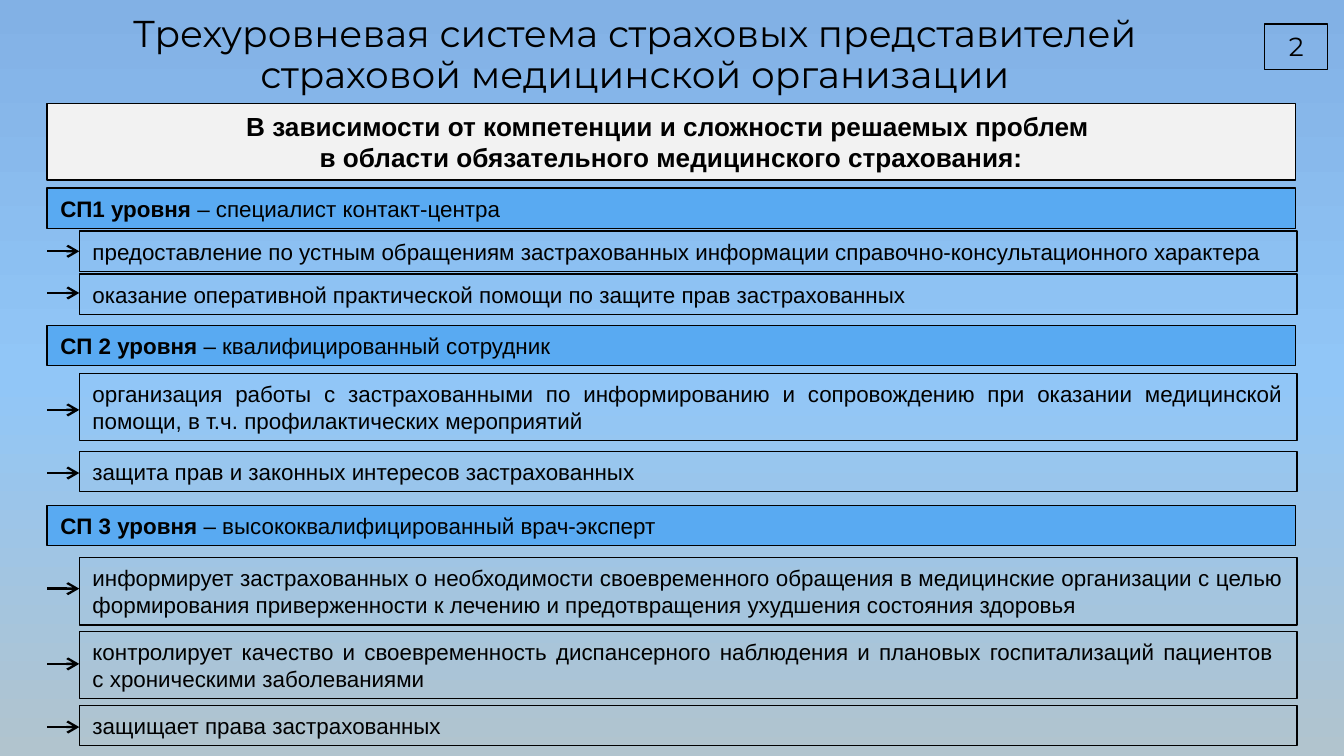
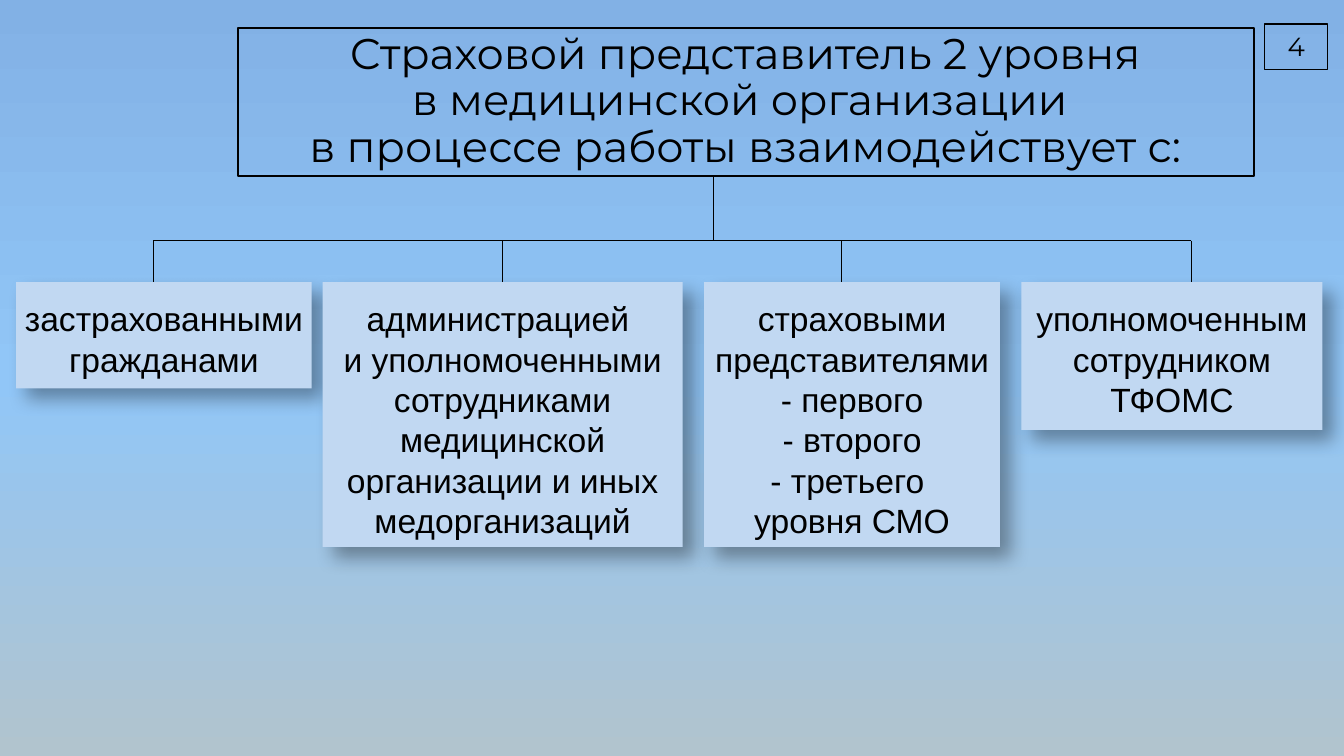
import pptx
import pptx.util
import pptx.dml.color
import pptx.enum.shapes
import pptx.enum.text
import pptx.oxml
import pptx.oxml.ns
from lxml import etree
from pptx.util import Inches

# Shared look
BLACK, PALE, LEVEL, CARD = "000000", "F2F2F2", "59AAF2", "C1D8F2"
BACKGROUND = [(0, "C1D8F2"), (0, "82B1E5"), (50, "91C6F7"), (100, "B1C4CE")]
HEAD_FONT, BODY_FONT = "Montserrat", "Arial"
INSETS = (0.1, 0.05, 0.1, 0.05)
CARD_INSETS = (0.04, 0.12, 0.04, 0)
ALIGN = pptx.enum.text.PP_ALIGN
ANCHOR = pptx.enum.text.MSO_ANCHOR

# Slide 1 content
LEVELS_TITLE = "Трехуровневая система страховых представителей страховой медицинской организации"
LEVELS_INTRO = [
    "В зависимости от компетенции и сложности решаемых проблем ",
    "в области обязательного медицинского страхования:",
]
# Each level: top, name, role, duties (top, height, arrow y, text)
LEVELS = [
    (1.4, "СП1 уровня", " – специалист контакт-центра", [
        (1.72, 0.3, 1.87, "предоставление по устным обращениям застрахованных информации "
                          "справочно-консультационного характера"),
        (2.04, 0.3, 2.18, "оказание оперативной практической помощи по защите прав "
                          "застрахованных"),
    ]),
    (2.42, "СП 2 уровня", " – квалифицированный сотрудник", [
        (2.78, 0.5, 3.05, "организация работы с застрахованными по информированию "
                          "и сопровождению при оказании медицинской помощи, "
                          "в т.ч. профилактических мероприятий"),
        (3.36, 0.3, 3.52, "защита прав и законных интересов застрахованных "),
    ]),
    (3.76, "СП 3 уровня", " – высококвалифицированный врач-эксперт", [
        (4.15, 0.5, 4.38, "информирует застрахованных о необходимости своевременного "
                          "обращения в медицинские организации с целью формирования "
                          "приверженности к лечению и предотвращения ухудшения "
                          "состояния здоровья"),
        (4.7, 0.5, 4.94, "контролирует качество и своевременность диспансерного наблюдения "
                         "и плановых госпитализаций пациентов \nс хроническими заболеваниями"),
        (5.25, 0.3, 5.41, "защищает права застрахованных "),
    ]),
]
LEVEL_LEFT, LEVEL_WIDTH = 0.35, 9.29
DUTY_LEFT, DUTY_WIDTH = 0.59, 9.06

# Slide 2 content
CONTACTS_TITLE = ("Страховой представитель 2 уровня\nв медицинской организации \n"
                  "в процессе работы взаимодействует с:")
# Each contact: left, width, height, x of its branch, paragraphs
CONTACTS = [
    (0.12, 2.2, 0.79, 1.14, ["застрахованными гражданами"]),
    (2.4, 2.68, 1.97, 3.74, ["администрацией \nи уполномоченными сотрудниками "
                             "медицинской организации и иных медорганизаций"]),
    (5.24, 2.2, 1.97, 6.26, ["страховыми представителями - первого\n- второго",
                             "- третьего \nуровня СМО"]),
    (7.6, 2.24, 1.1, 8.86, ["уполномоченным сотрудником ТФОМС"]),
]
CARD_TOP, RAIL_Y, TRUNK_X, TRUNK_TOP = 2.1, 1.79, 5.31, 1.32


def rgb(color):
    return pptx.dml.color.RGBColor.from_string(color)


def add_text(sp, paragraphs, size, font=BODY_FONT, align=ALIGN.CENTER, bold=None,
             anchor=ANCHOR.TOP, spacing=None, insets=INSETS):
    """Fill sp; a paragraph is a string or a list of (text, bold) runs."""
    tf = sp.text_frame
    tf.word_wrap = True
    tf.vertical_anchor = anchor
    tf.margin_left, tf.margin_top, tf.margin_right, tf.margin_bottom = map(Inches, insets)
    for i, content in enumerate(paragraphs):
        p = tf.add_paragraph() if i else tf.paragraphs[0]
        p.alignment = align
        p.line_spacing = spacing
        if isinstance(content, str):
            p.text = content
        else:
            for text, run_bold in content:
                r = p.add_run()
                r.text = text
                r.font.bold = run_bold
        p.font.size = pptx.util.Pt(size)
        p.font.name = font
        p.font.bold = bold
        p.font.color.rgb = rgb(BLACK)


def add_box(s, left, top, width, height, fill=None, outlined=True):
    sp = s.shapes.add_shape(pptx.enum.shapes.MSO_SHAPE.RECTANGLE, Inches(left), Inches(top),
                            Inches(width), Inches(height))
    sp.shadow.inherit = False
    if fill:
        sp.fill.solid()
        sp.fill.fore_color.rgb = rgb(fill)
    else:
        sp.fill.background()
    if outlined:
        sp.line.color.rgb = rgb(BLACK)
        sp.line.width = pptx.util.Pt(0.75)
    else:
        sp.line.fill.background()
    return sp


def add_line(s, x1, y1, x2, y2, width, arrow=False):
    line = s.shapes.add_connector(pptx.enum.shapes.MSO_CONNECTOR.STRAIGHT, Inches(x1),
                                  Inches(y1), Inches(x2), Inches(y2))
    line.line.color.rgb = rgb(BLACK)
    line.line.width = pptx.util.Pt(width)
    sp_pr = line._element.spPr
    if arrow:
        ln = sp_pr.find(pptx.oxml.ns.qn("a:ln"))
        etree.SubElement(ln, pptx.oxml.ns.qn("a:tailEnd"), type="arrow")
    etree.SubElement(sp_pr, pptx.oxml.ns.qn("a:effectLst"))


def add_card_shadow(sp):
    effects = sp._element.spPr.find(pptx.oxml.ns.qn("a:effectLst"))
    effects.append(pptx.oxml.parse_xml(
        f'<a:outerShdw {pptx.oxml.ns.nsdecls("a")} blurRad="{pptx.util.Pt(10.2)}" '
        f'dist="{pptx.util.Pt(8)}" dir="{45 * 60000}" algn="tl" rotWithShape="0">'
        f'<a:srgbClr val="{BLACK}"><a:alpha val="35000"/></a:srgbClr></a:outerShdw>'))


def add_slide(prs, number):
    """Blank slide with the gradient background and the boxed number."""
    s = prs.slides.add_slide(prs.slide_layouts[6])
    fill = s.background.fill
    fill.gradient()
    fill.gradient_angle = 270
    stops = next(s._element.iter(pptx.oxml.ns.qn("a:gsLst")))
    for stop in list(stops):
        stops.remove(stop)
    for position, color in BACKGROUND:
        stop = etree.SubElement(stops, pptx.oxml.ns.qn("a:gs"), pos=str(position * 1000))
        etree.SubElement(stop, pptx.oxml.ns.qn("a:srgbClr"), val=color)
    add_text(add_box(s, 9.41, 0.18, 0.47, 0.34), [number], 14, HEAD_FONT)
    return s


def build_levels(prs):
    s = add_slide(prs, "2")
    title = s.shapes.add_textbox(Inches(0.12), Inches(0.06), Inches(9.21), Inches(0.71))
    add_text(title, [LEVELS_TITLE], 20, HEAD_FONT, anchor=ANCHOR.MIDDLE, spacing=0.9)
    intro = add_box(s, LEVEL_LEFT, 0.77, LEVEL_WIDTH, 0.57, PALE)
    add_text(intro, LEVELS_INTRO, 14, bold=True)

    for level_top, name, role, duties in LEVELS:
        band = add_box(s, LEVEL_LEFT, level_top, LEVEL_WIDTH, 0.3, LEVEL)
        add_text(band, [[(name, True), (role, False)]], 12, align=ALIGN.JUSTIFY)
        for top, height, arrow_y, text in duties:
            duty = add_box(s, DUTY_LEFT, top, DUTY_WIDTH, height)
            add_text(duty, [text], 12, align=ALIGN.JUSTIFY)
            add_line(s, LEVEL_LEFT, arrow_y, DUTY_LEFT, arrow_y, 1.25, arrow=True)


def build_contacts(prs):
    s = add_slide(prs, "4")
    title = add_box(s, 1.77, 0.21, 7.56, 1.1)
    add_text(title, [CONTACTS_TITLE], 23, HEAD_FONT, anchor=ANCHOR.MIDDLE, spacing=0.9)

    # Trunk and rail, then a branch and a card for each contact
    add_line(s, TRUNK_X, TRUNK_TOP, TRUNK_X, RAIL_Y, 0.25)
    add_line(s, CONTACTS[0][3], RAIL_Y, CONTACTS[-1][3], RAIL_Y, 0.25)
    for left, width, height, branch_x, paragraphs in CONTACTS:
        add_line(s, branch_x, RAIL_Y, branch_x, CARD_TOP, 0.25)
        card = add_box(s, left, CARD_TOP, width, height, CARD, outlined=False)
        add_card_shadow(card)
        add_text(card, paragraphs, 18, insets=CARD_INSETS)


def main():
    prs = pptx.Presentation()
    prs.slide_width = Inches(10)
    prs.slide_height = prs.slide_width * 9 // 16
    build_levels(prs)
    build_contacts(prs)
    prs.save("out.pptx")


if __name__ == "__main__":
    main()
